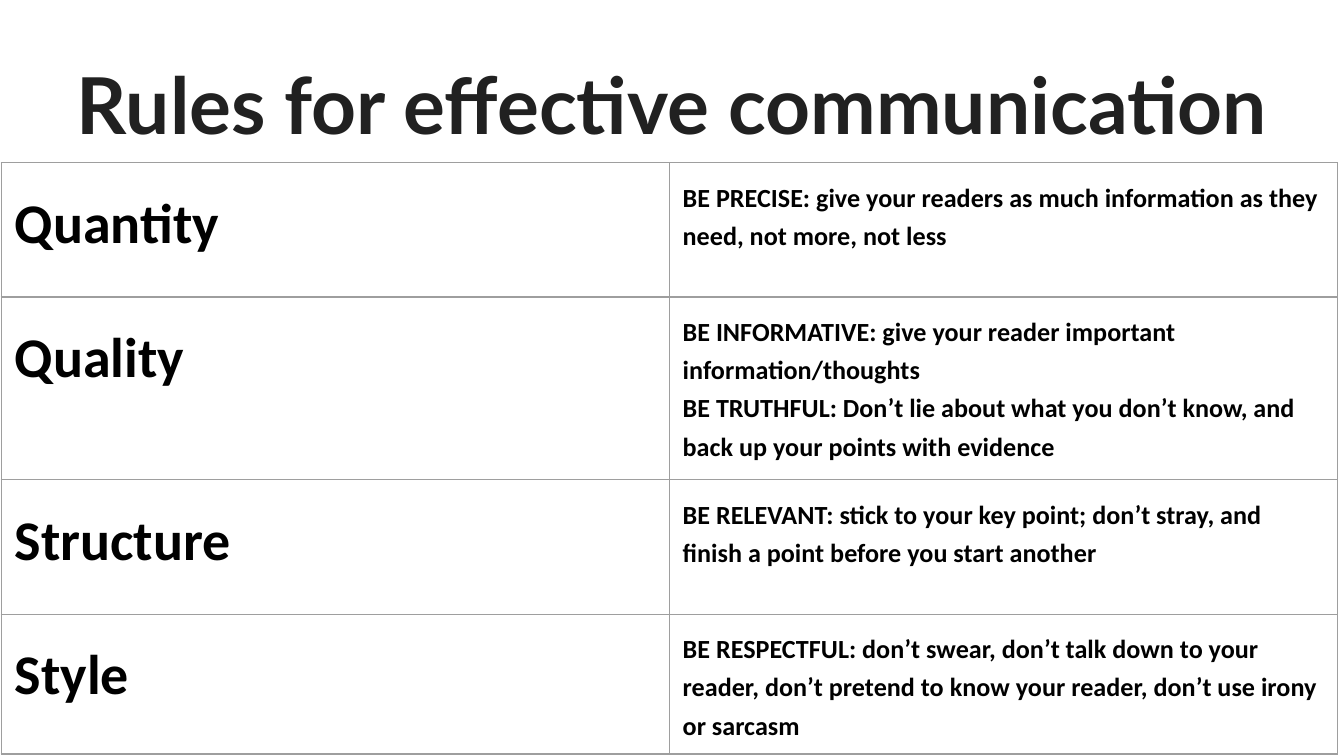
from dataclasses import dataclass

from lxml.etree import SubElement, Element
from pptx import Presentation
from pptx.dml.color import RGBColor as RGB
from pptx.enum.text import MSO_ANCHOR as Anchor, PP_ALIGN as Align
from pptx.oxml.ns import qn
from pptx.util import Inches, Pt


@dataclass(frozen=True)
class Theme:
    title_font: str = "Lato"
    body_font: str = "Calibri"
    title_color: str = "212121"
    text_color: str = "000000"
    background: str = "FFFFFF"
    border: str = "9E9E9E"
    title_size: int = 42
    name_size: int = 30
    rule_size: int = 14
    border_width: float = 0.75
    line_spacing: float = 1.2


THEME = Theme()
TITLE = "Rules for effective communication"
RULES = [
    ("Quantity", 1, [
        "BE PRECISE: give your readers as much information as they need, not more, not less",
    ]),
    ("Quality", 1.36, [
        "BE INFORMATIVE: give your reader important information/thoughts",
        "BE TRUTHFUL: Don’t lie about what you don’t know, and back up your points with evidence",
    ]),
    ("Structure", 1, [
        "BE RELEVANT: stick to your key point; don’t stray, and finish a point before you start another",
    ]),
    ("Style", 1, [
        "BE RESPECTFUL: don’t swear, don’t talk down to your reader, "
        "don’t pretend to know your reader, don’t use irony or sarcasm",
    ]),
]


def write(tf, lines, *, size, font=THEME.body_font, color=THEME.text_color,
          align=Align.LEFT, spacing=THEME.line_spacing):
    tf.word_wrap = True
    for i, line in enumerate(lines):
        p = tf.add_paragraph() if i else tf.paragraphs[0]
        p.alignment = align
        p.line_spacing = spacing
        r = p.add_run()
        r.text = line
        r.font.name = font
        r.font.size = Pt(size)
        r.font.bold = True
        r.font.color.rgb = RGB.from_string(color)


def set_margins(box):
    box.margin_left = box.margin_right = Inches(0.1)
    box.margin_top = box.margin_bottom = Inches(0.1)


def add_borders(cell):
    tcPr = cell._tc.get_or_add_tcPr()
    for i, side in enumerate(("lnL", "lnR", "lnT", "lnB")):
        ln = Element(qn(f"a:{side}"), w=str(Pt(THEME.border_width)))
        fill = SubElement(ln, qn("a:solidFill"))
        SubElement(fill, qn("a:srgbClr"), val=THEME.border)
        tcPr.insert(i, ln)


def add_title(s):
    sp = s.shapes.add_textbox(Inches(0.34), Inches(0.32), Inches(9.32), Inches(0.88))
    tf = sp.text_frame
    set_margins(tf)
    tf.vertical_anchor = Anchor.TOP
    write(tf, [TITLE], size=THEME.title_size, font=THEME.title_font,
          color=THEME.title_color, align=Align.CENTER, spacing=1.0)


def fill_cell(cell, lines, size):
    set_margins(cell)
    cell.vertical_anchor = Anchor.TOP
    cell.fill.solid()
    cell.fill.fore_color.rgb = RGB.from_string(THEME.background)
    add_borders(cell)
    write(cell.text_frame, lines, size=size)


def add_rules_table(s):
    height = sum(row_height for _, row_height, _ in RULES)
    table = s.shapes.add_table(len(RULES), 2, Inches(0.01), Inches(1.21),
                               Inches(9.94), Inches(height)).table
    table.first_row = table.horz_banding = False
    for row, (name, row_height, lines) in zip(table.rows, RULES):
        row.height = Inches(row_height)
        fill_cell(row.cells[0], [name], THEME.name_size)
        fill_cell(row.cells[1], lines, THEME.rule_size)


def main():
    prs = Presentation()
    prs.slide_width, prs.slide_height = Inches(10), Inches(10 * 9 / 16)
    s = prs.slides.add_slide(prs.slide_layouts[6])
    add_title(s)
    add_rules_table(s)
    prs.save("out.pptx")


if __name__ == "__main__":
    main()
